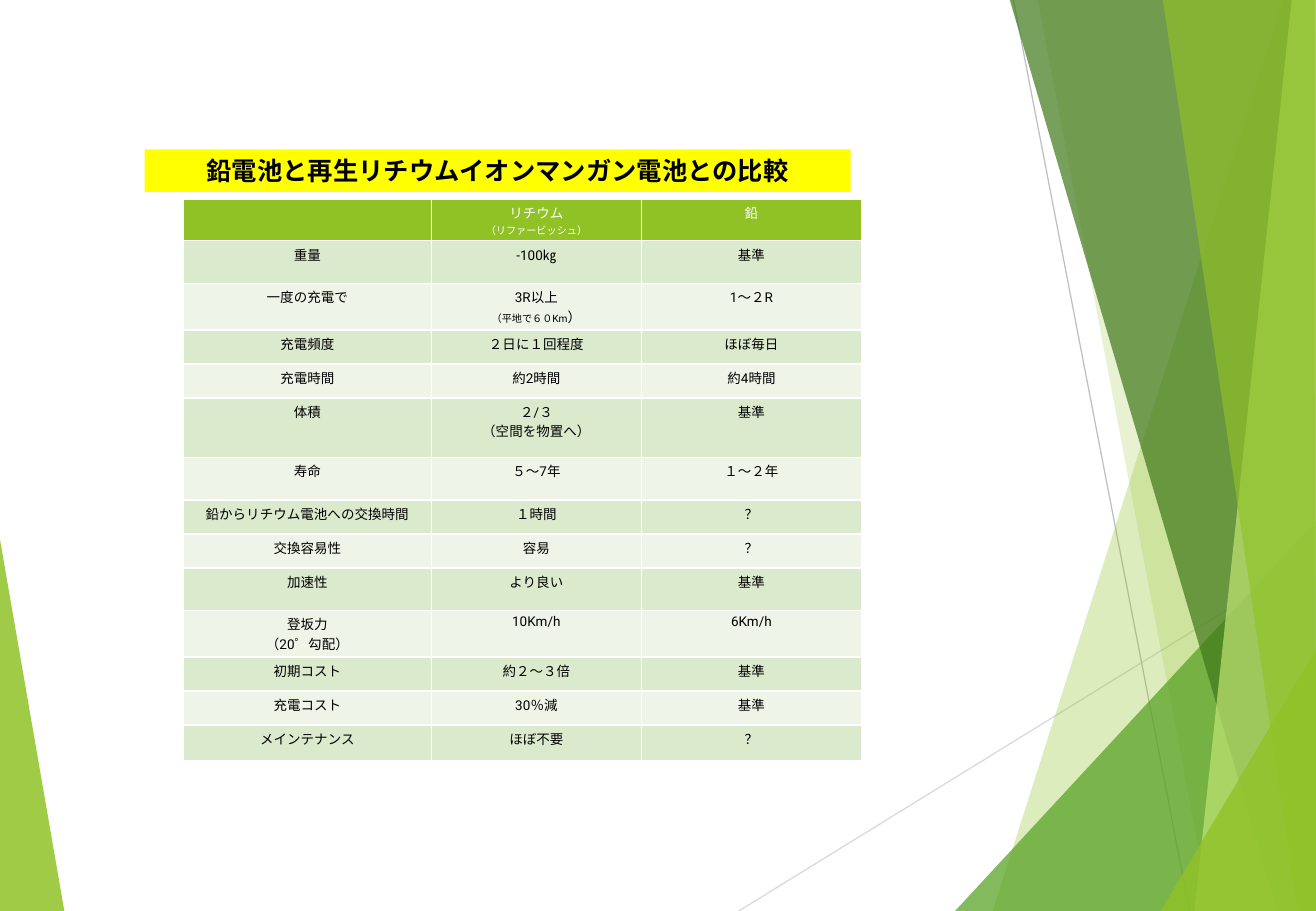
from pptx import Presentation, util as u
from pptx.dml.color import RGBColor
from pptx.enum import shapes, text
from pptx.oxml.ns import qn
from lxml import etree

PX = 9144  # 100 px to the inch
WIDE, HIGH = 1083, 750
FONT = "Roboto"
HEX = {
    "lime": "90C226", "green": "54A021", "dark": "3F7819", "pale": "C0E474",
    "band": "DBE9CD", "light": "EEF4E8", "yellow": "FFFF00",
    "gray": "D9D9D9", "mid": "BFBFBF", "black": "000000", "white": "FFFFFF",
}


class Deck:
    def __init__(self):
        self.prs = Presentation()
        self.prs.slide_width, self.prs.slide_height = WIDE * PX, HIGH * PX
        self.slide = self.prs.slides.add_slide(self.prs.slide_layouts[5])

    def paint(self, fill, name):
        fill.solid()
        fill.fore_color.rgb = RGBColor.from_string(HEX[name])

    def style(self, font, size, name, bold=False):
        font.name, font.size, font.bold = FONT, u.Pt(size), bold
        font.color.rgb = RGBColor.from_string(HEX[name])

    def facet(self, points, name, alpha):
        pen = self.slide.shapes.build_freeform(*points[0], scale=PX)
        pen.add_line_segments(points[1:], close=True)
        shape = pen.convert_to_shape()
        shape.shadow.inherit = False
        shape.line.fill.background()
        self.paint(shape.fill, name)
        color = shape._element.spPr.find(qn("a:solidFill"))[0]
        etree.SubElement(color, qn("a:alpha"), val=str(alpha * 1000))

    def line(self, x1, y1, x2, y2, name):
        line = self.slide.shapes.add_connector(
            shapes.MSO_CONNECTOR.STRAIGHT, x1 * PX, y1 * PX, x2 * PX, y2 * PX)
        line.line.width = u.Pt(0.75)
        line.line.color.rgb = RGBColor.from_string(HEX[name])
        etree.SubElement(line._element.spPr, qn("a:effectLst"))

    def title(self, x, y, w, h, words):
        box = self.slide.shapes.title
        box.left, box.top, box.width, box.height = (n * PX for n in (x, y, w, h))
        self.paint(box.fill, "yellow")
        frame = box.text_frame
        frame.text = words
        frame.word_wrap = True
        frame.auto_size = text.MSO_AUTO_SIZE.NONE
        frame.vertical_anchor = text.MSO_ANCHOR.MIDDLE
        para = frame.paragraphs[0]
        para.alignment = text.PP_ALIGN.CENTER
        self.style(para.font, 15, "black", True)

    def cell(self, cell, words, fill, ink):
        self.paint(cell.fill, fill)
        cell.margin_left = cell.margin_right = 5 * PX
        cell.margin_top = cell.margin_bottom = 3 * PX
        cell.text = words.replace("~", "")
        for para, line in zip(cell.text_frame.paragraphs, words.split("\n")):
            para.alignment = text.PP_ALIGN.CENTER
            self.style(para.font, 8, ink)
            if "~" in line:  # text between tildes is small
                para.clear()
                for i, part in enumerate(line.split("~")):
                    if part:
                        run = para.add_run()
                        run.text = part
                        run.font.size = u.Pt(6 if i % 2 else 8)

    def table(self, x, y, cols, rows, data):
        grid = self.slide.shapes.add_table(
            len(rows), len(cols), x * PX, y * PX, sum(cols) * PX, sum(rows) * PX).table
        for col, w in zip(grid.columns, cols):
            col.width = w * PX
        for r, (h, words) in enumerate(zip(rows, data)):
            grid.rows[r].height = h * PX
            fill = ("band" if r % 2 else "light") if r else "lime"
            for c, item in enumerate(words):
                self.cell(grid.cell(r, c), item, fill, "black" if r else "white")


FACETS = [
    ([(1056, 0), (817, HIGH), (WIDE, HIGH), (WIDE, 0)], "lime", 30),
    ([(854, 0), (996, HIGH), (WIDE, HIGH), (WIDE, 0)], "lime", 20),
    ([(786, HIGH), (WIDE, 429), (WIDE, HIGH)], "green", 72),
    ([(831, 0), (1051, HIGH), (WIDE, HIGH), (WIDE, 0)], "dark", 70),
    ([(1063, 0), (983, HIGH), (WIDE, HIGH), (WIDE, 0)], "pale", 70),
    ([(957, 0), (1068, HIGH), (WIDE, HIGH), (1082, 0)], "lime", 65),
    ([(955, HIGH), (WIDE, 535), (WIDE, HIGH)], "lime", 80),
]
COLS = [204, 173, 181]
ROWS = [30, 35, 34, 28, 28, 49, 35, 28, 28, 35, 35, 28, 28, 29]
DATA = [
    ("", "リチウム\n~（リファービッシュ）", "鉛"),
    ("重量", "-100㎏", "基準"),
    ("一度の充電で", "3R以上\n~（平地で６０Km~）", "1～２R"),
    ("充電頻度", "２日に１回程度", "ほぼ毎日"),
    ("充電時間", "約2時間", "約4時間"),
    ("体積", "２/３\n（空間を物置へ）", "基準"),
    ("寿命", "５～7年", "１～２年"),
    ("鉛からリチウム電池への交換時間", "１時間", "？"),
    ("交換容易性", "容易", "？"),
    ("加速性", "より良い", "基準"),
    ("登坂力\n（20゜勾配）", "10Km/h", "6Km/h"),
    ("初期コスト", "約２～３倍", "基準"),
    ("充電コスト", "30％減", "基準"),
    ("メインテナンス", "ほぼ不要", "？"),
]


def main():
    deck = Deck()
    # Backdrop: left wedge, thin lines, right facets
    deck.facet([(0, 444), (53, HIGH), (0, HIGH)], "lime", 85)
    deck.line(608, HIGH, WIDE, 457, "gray")
    deck.line(834, 0, 979, HIGH, "mid")
    for facet in FACETS:
        deck.facet(*facet)
    # Heading and comparison
    deck.title(119, 123, 581, 35, "鉛電池と再生リチウムイオンマンガン電池との比較")
    deck.table(151, 164, COLS, ROWS, DATA)
    deck.prs.save("out.pptx")


if __name__ == "__main__":
    main()
